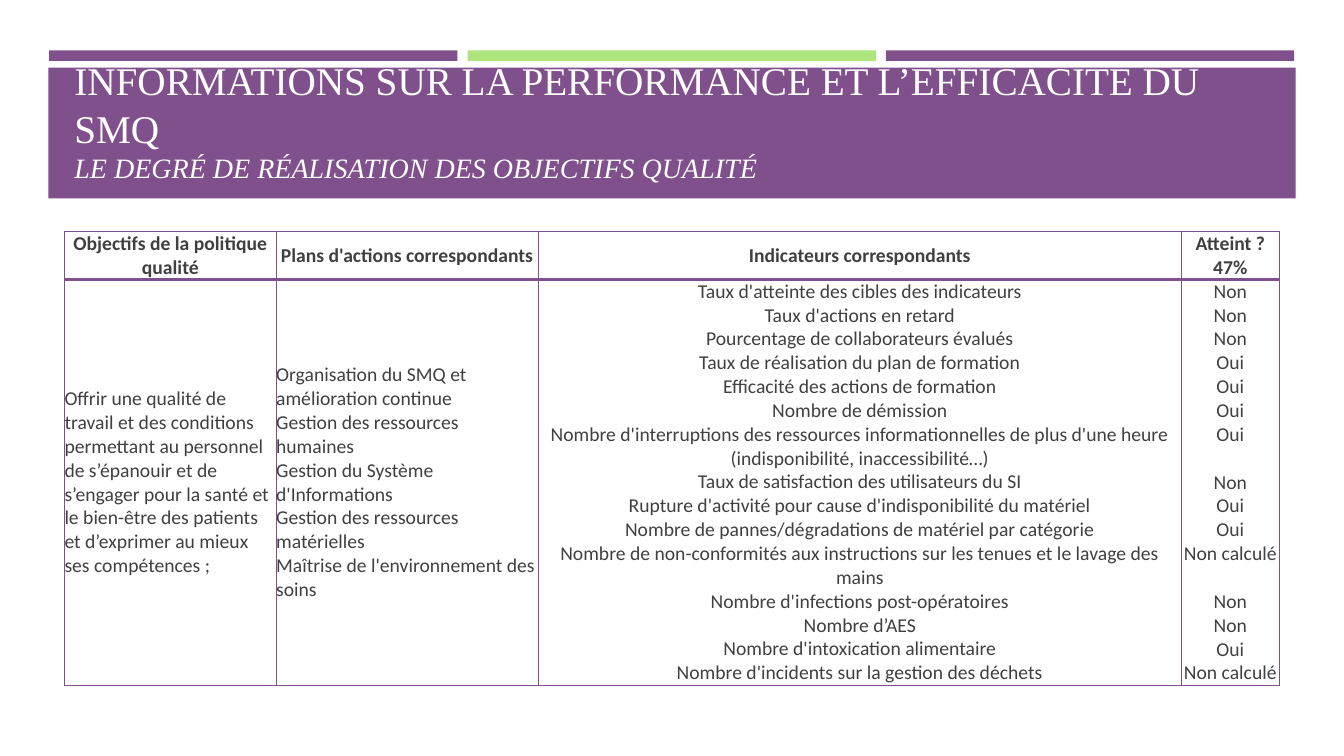
from dataclasses import dataclass

import pptx
import pptx.dml.color
import pptx.enum.shapes
import pptx.enum.text
import pptx.oxml.ns
import pptx.util
from lxml import etree

SLIDE_WIDTH = pptx.util.Inches(13.33)
SLIDE_HEIGHT = pptx.util.Inches(7.5)
COLOURS = {"purple": "7F508B", "green": "ADE67F", "white": "FFFFFF", "grey": "404040"}
CENTER = pptx.enum.text.PP_ALIGN.CENTER
LEFT = pptx.enum.text.PP_ALIGN.LEFT
MIDDLE = pptx.enum.text.MSO_ANCHOR.MIDDLE
TOP = pptx.enum.text.MSO_ANCHOR.TOP
LINE_HEIGHT = 17.1


@dataclass(frozen=True)
class Area:
    left: float
    top: float
    width: float
    height: float

    def emu(self) -> tuple[int, int, int, int]:
        return across(self.left), down(self.top), across(self.width), down(self.height)


@dataclass(frozen=True)
class Indicator:
    label: str
    reached: str
    lines: int = 1


@dataclass(frozen=True)
class Entry:
    lines: list[str]
    align: int = CENTER
    space_before: float = 0


@dataclass(frozen=True)
class Column:
    share: float
    heading: str
    entries: list[Entry]
    anchor: int


def across(percent: float) -> int:
    return round(SLIDE_WIDTH * percent / 100)


def down(percent: float) -> int:
    return round(SLIDE_HEIGHT * percent / 100)


def rgb(name: str) -> pptx.dml.color.RGBColor:
    return pptx.dml.color.RGBColor.from_string(COLOURS[name])


def add_block(slide, area: Area, colour: str) -> None:
    block = slide.shapes.add_shape(pptx.enum.shapes.MSO_SHAPE.RECTANGLE, *area.emu())
    block.shadow.inherit = False
    block.fill.solid()
    block.fill.fore_color.rgb = rgb(colour)
    block.line.fill.background()


def add_run(paragraph, text: str, font: str, size: float, colour: str,
            bold: bool = False, italic: bool = False) -> None:
    run = paragraph.add_run()
    run.text = text
    run.font.name = font
    run.font.size = pptx.util.Pt(size)
    run.font.color.rgb = rgb(colour)
    run.font.bold = bold
    run.font.italic = italic


def add_title(slide, area: Area) -> None:
    frame = slide.shapes.add_textbox(*area.emu()).text_frame
    frame.word_wrap = True
    frame.vertical_anchor = pptx.enum.text.MSO_ANCHOR.BOTTOM
    title = frame.paragraphs[0]
    add_run(title, "INFORMATIONS SUR LA PERFORMANCE ET L’EFFICACITÉ DU SMQ",
            "Times New Roman", 28, "white")
    title.add_line_break()
    add_run(title, "LE DEGRÉ DE RÉALISATION DES OBJECTIFS QUALITÉ",
            "Times New Roman", 20, "white", italic=True)


def add_borders(cell, top: float, bottom: float) -> None:
    properties = cell._tc.get_or_add_tcPr()
    for side, points in (("L", 1), ("R", 1), ("T", top), ("B", bottom)):
        line = etree.SubElement(properties, pptx.oxml.ns.qn(f"a:ln{side}"),
                                w=str(pptx.util.Pt(points)))
        fill = etree.SubElement(line, pptx.oxml.ns.qn("a:solidFill"))
        etree.SubElement(fill, pptx.oxml.ns.qn("a:srgbClr"), val=COLOURS["purple"])


def fill_cell(cell, entries: list[Entry], anchor: int, heading: bool) -> None:
    add_borders(cell, top=1 if heading else 2, bottom=2 if heading else 1)
    cell.fill.background()
    cell.margin_left = cell.margin_right = cell.margin_top = cell.margin_bottom = 0
    cell.vertical_anchor = anchor
    for index, entry in enumerate(entries):
        frame = cell.text_frame
        paragraph = frame.add_paragraph() if index else frame.paragraphs[0]
        paragraph.alignment = entry.align
        if entry.space_before:
            paragraph.space_before = pptx.util.Pt(entry.space_before)
        for number, text in enumerate(entry.lines):
            if number:
                paragraph.add_line_break()
            add_run(paragraph, text, "Calibri", 14, "grey", bold=heading)


def add_objectives(slide, area: Area, columns: list[Column], rows: list[float]) -> None:
    table = slide.shapes.add_table(len(rows), len(columns), *area.emu()).table
    table.first_row = False
    table.horz_banding = False
    for row, share in zip(table.rows, rows):
        row.height = down(share)
    for index, column in enumerate(columns):
        table.columns[index].width = across(column.share)
        fill_cell(table.cell(0, index), [Entry([column.heading])], MIDDLE, True)
        fill_cell(table.cell(1, index), column.entries, column.anchor, False)


INDICATORS = [
    Indicator("Taux d'atteinte des cibles des indicateurs", "Non"),
    Indicator("Taux d'actions en retard", "Non"),
    Indicator("Pourcentage de collaborateurs évalués", "Non"),
    Indicator("Taux de réalisation du plan de formation", "Oui"),
    Indicator("Efficacité des actions de formation", "Oui"),
    Indicator("Nombre de démission", "Oui"),
    Indicator("Nombre d'interruptions des ressources informationnelles de plus d'une heure "
              "(indisponibilité, inaccessibilité…)", "Oui", 2),
    Indicator("Taux de satisfaction des utilisateurs du SI", "Non"),
    Indicator("Rupture d'activité pour cause d'indisponibilité du matériel", "Oui"),
    Indicator("Nombre de pannes/dégradations de matériel par catégorie", "Oui"),
    Indicator("Nombre de non-conformités aux instructions sur les tenues et le lavage des mains",
              "Non calculé", 2),
    Indicator("Nombre d'infections post-opératoires", "Non"),
    Indicator("Nombre d’AES", "Non"),
    Indicator("Nombre d'intoxication alimentaire", "Oui"),
    Indicator("Nombre d'incidents sur la gestion des déchets", "Non calculé"),
]
OBJECTIVE = ("Offrir une qualité de travail et des conditions permettant au personnel de "
             "s’épanouir et de s’engager pour la santé et le bien-être des patients et "
             "d’exprimer au mieux ses compétences ;")
ACTION_PLANS = [
    "Organisation du SMQ et amélioration continue",
    "Gestion des ressources humaines",
    "Gestion du Système d'Informations",
    "Gestion des ressources matérielles",
    "Maîtrise de l'environnement des soins",
]
EXTRA_LINES = [0] + [indicator.lines - 1 for indicator in INDICATORS[:-1]]
RESULTS = [Entry([indicator.reached], space_before=extra * LINE_HEIGHT)
           for indicator, extra in zip(INDICATORS, EXTRA_LINES)]
COLUMNS = [
    Column(15.75, "Objectifs de la politique qualité", [Entry([OBJECTIVE], LEFT)], MIDDLE),
    Column(19.5, "Plans d'actions correspondants", [Entry(ACTION_PLANS, LEFT)], MIDDLE),
    Column(47.86, "Indicateurs correspondants",
           [Entry([indicator.label]) for indicator in INDICATORS], TOP),
    Column(7.28, "Atteint ? 47%", RESULTS, TOP),
]
ROWS = [6.3, 53.7]


def main() -> None:
    deck = pptx.Presentation()
    deck.slide_width, deck.slide_height = SLIDE_WIDTH, SLIDE_HEIGHT
    slide = deck.slides.add_slide(deck.slide_layouts[6])
    for index, colour in enumerate(("purple", "green", "purple")):
        add_block(slide, Area(3.66 + index * 31.13, 6.67, 30.38, 1.4), colour)
    add_block(slide, Area(3.6, 8.93, 92.8, 17.33), "purple")
    add_title(slide, Area(4.8, 10.27, 90.47, 14.8))
    add_objectives(slide, Area(4.8, 30.67, 90.39, sum(ROWS)), COLUMNS, ROWS)
    deck.save("out.pptx")


if __name__ == "__main__":
    main()
